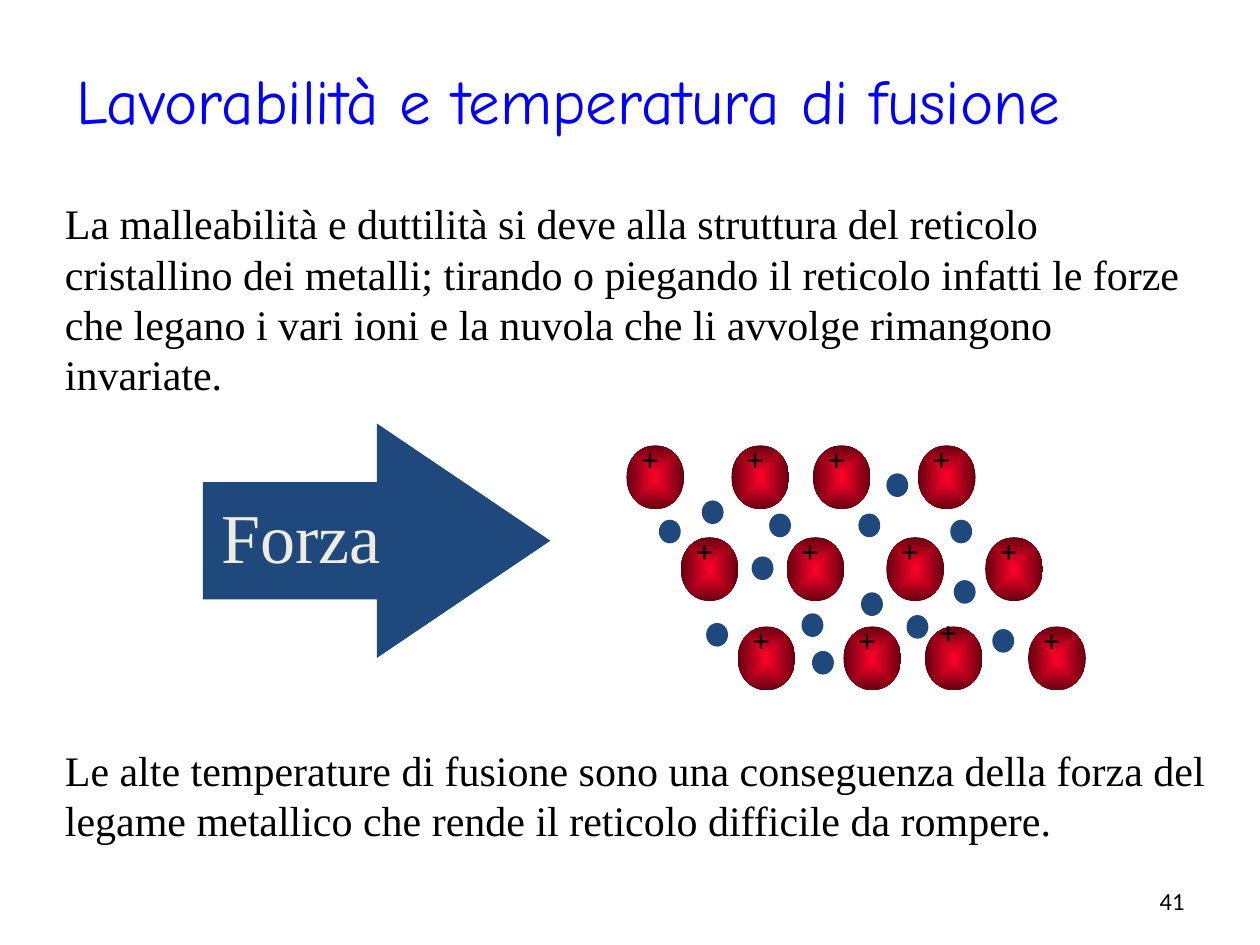
from lxml import etree
from pptx import Presentation
from pptx.dml.color import RGBColor
from pptx.enum import shapes, text
from pptx.oxml.ns import qn
from pptx.util import Pt

COLORS = {"title": "0000FF", "ink": "000000", "navy": "1F497D", "cream": "EEECE1",
          "ion_core": "FC0128", "ion_rim": "650010"}
SERIF = "Times New Roman"
ION_ROWS = [(0, (0, 60, 106.5, 166.5)),
            (52.5, (31, 91.5, 148.5, 205)),
            (103.5, (63.5, 124, 170.5, 229.5))]
LOW_ION = (103.5, 170.5)
ELECTRONS = [(132.5, 39), (43, 31.5), (45.5, 101.5), (71.5, 63.5), (81.5, 39),
             (106, 117.5), (209, 105), (134, 84), (160, 97), (187, 77),
             (185, 42.5), (148.5, 16), (18.5, 42.5), (100, 96)]


def rgb(name):
    """Return the named colour."""
    return RGBColor.from_string(COLORS[name])


def add_text(slide, box, lines, size, color="ink", font=SERIF, align=None, bold=False):
    """Add a wrapping text box with one paragraph per line."""
    frame = slide.shapes.add_textbox(*map(Pt, box)).text_frame
    frame.word_wrap = True
    frame.text = "\n".join(lines)
    for paragraph in frame.paragraphs:
        paragraph.alignment = align
        for run in paragraph.runs:
            run.font.size, run.font.name, run.font.bold = Pt(size), font, bold
            run.font.color.rgb = rgb(color)
    return frame


def add_solid(slide, preset, box, color):
    """Add a flat preset shape without outline."""
    shape = slide.shapes.add_shape(preset, *map(Pt, box))
    shape.shadow.inherit = False
    shape.fill.solid()
    shape.fill.fore_color.rgb = rgb(color)
    shape.line.fill.background()
    return shape


def shade_from_centre(shape):
    """Fill a shape with a gradient running from its centre to its rim."""
    shape.fill.gradient()
    for stop, name in zip(shape.fill.gradient_stops, ("ion_core", "ion_rim")):
        stop.color.rgb = rgb(name)
    gradient = shape._element.spPr.find(qn("a:gradFill"))
    gradient.remove(gradient.find(qn("a:lin")))
    route = etree.SubElement(gradient, qn("a:path"), {"path": "shape"})
    etree.SubElement(route, qn("a:fillToRect"), dict.fromkeys("ltrb", "50000"))


def add_ion(slide, left, top, sign_rise):
    """Add a positive ion with its plus sign."""
    ion = add_solid(slide, shapes.MSO_SHAPE.OVAL, (left, top, 33, 36.5), "ion_core")
    shade_from_centre(ion)
    sign = add_text(slide, (left + 2.25, top - sign_rise, 22.5, 29), ["+"], 18,
                    align=text.PP_ALIGN.CENTER, bold=True)
    sign.margin_left = sign.margin_right = 0


def add_lattice(slide, left, top):
    """Add the metal lattice of ions and free electrons."""
    for y, columns in ION_ROWS:
        for x in columns:
            add_ion(slide, left + x, top + y, 11.5 if (y, x) == LOW_ION else 6.75)
    for x, y in ELECTRONS:
        add_solid(slide, shapes.MSO_SHAPE.OVAL, (left + x, top + y, 12.5, 13.5), "navy")


def add_force(slide, left, top, width, height):
    """Add the labelled force arrow."""
    arrow = add_solid(slide, shapes.MSO_SHAPE.RIGHT_ARROW, (left, top, width, height), "navy")
    arrow.adjustments[0], arrow.adjustments[1] = 0.5, 0.74
    add_text(slide, (left + 3.5, top + 36.5, 143.5, 55.5), ["Forza"], 40, "cream")


def add_body(slide, box):
    """Add both explanations, leaving room between them for the drawing."""
    frame = add_text(slide, box, [
        "La malleabilità e duttilità si deve alla struttura del reticolo cristallino dei "
        "metalli; tirando o piegando il reticolo infatti le forze che legano i vari ioni e "
        "la nuvola che li avvolge rimangono invariate.",
        "Le alte temperature di fusione sono una conseguenza della forza del legame "
        "metallico che rende il reticolo difficile da rompere."], 24)
    frame.paragraphs[1].space_before = Pt(197)


def main():
    """Build and save the slide."""
    deck = Presentation()
    deck.slide_width, deck.slide_height = Pt(720), Pt(540)
    slide = deck.slides.add_slide(deck.slide_layouts[6])
    number = add_text(slide, (516, 500.5, 168, 28.5), ["41"], 14, font="Calibri",
                      align=text.PP_ALIGN.RIGHT)
    number.vertical_anchor = text.MSO_ANCHOR.MIDDLE
    add_body(slide, (30, 109.5, 666, 412))
    add_force(slide, 116, 242, 198.5, 134)
    add_lattice(slide, 358, 254.5)
    add_text(slide, (36.5, 31.5, 644.5, 51), ["Lavorabilità e temperatura di fusione"], 36,
             "title", "Comic Neue")
    deck.save("out.pptx")


if __name__ == "__main__":
    main()
